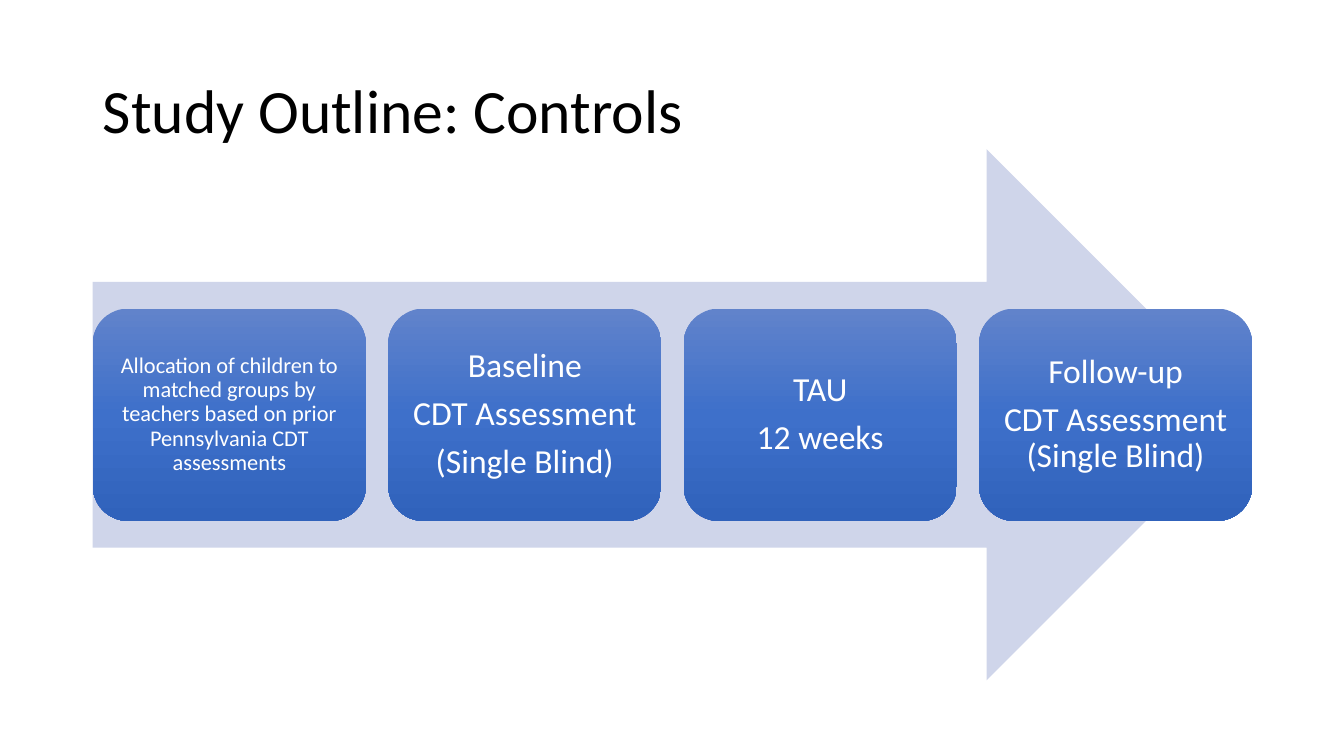
from copy import deepcopy
from pptx import Presentation, util as u
from pptx.dml.color import RGBColor
from pptx.enum import shapes, text
from pptx.oxml.ns import qn

INK = {"title": "000000", "arrow": "CFD5EA", "card": "FFFFFF",
       "top": "6183CB", "mid": "3E70CA", "low": "3062BB"}
LEFT, WIDE = 0.92, 11.5
ARROW_TOP, ARROW_HIGH = 1.48, 5.27
GAP = 0.22
STEPS = [
    (["Allocation of children to matched groups by teachers based on prior "
      "Pennsylvania CDT assessments"], 16, 0.07),
    (["Baseline", "CDT Assessment", "(Single Blind)"], 24, 0.1),
    (["TAU", "12 weeks"], 24, 0.1),
    (["Follow-up", "CDT Assessment (Single Blind)"], 24, 0.1),
]


def write(shape, lines, size, color, align, inset=(0.1, 0.05), after=0):
    frame = shape.text_frame
    frame.word_wrap = True
    frame.auto_size = text.MSO_AUTO_SIZE.NONE
    frame.vertical_anchor = text.MSO_ANCHOR.MIDDLE
    frame.margin_left = frame.margin_right = u.Inches(inset[0])
    frame.margin_top = frame.margin_bottom = u.Inches(inset[1])
    frame.text = "\n".join(lines)
    for para in frame.paragraphs:
        para.alignment = align
        para.line_spacing = 0.9
        para.space_after = u.Pt(size * after)
        font = para.runs[0].font
        font.name, font.size = "Calibri", u.Pt(size)
        font.color.rgb = RGBColor.from_string(color)


def place(kind, *box):
    shape = slide.shapes.add_shape(kind, *map(u.Inches, box))
    shape.shadow.inherit = False
    shape.line.fill.background()
    return shape


deck = Presentation()
deck.slide_width, deck.slide_height = u.Inches(13.33), u.Inches(7.5)
slide = deck.slides.add_slide(deck.slide_layouts[5])

title = slide.shapes.title
title.left, title.top = u.Inches(LEFT), u.Inches(0.4)
title.width, title.height = u.Inches(WIDE), u.Inches(1.45)
write(title, ["Study Outline: Controls"], 44, INK["title"], text.PP_ALIGN.LEFT)

arrow = place(shapes.MSO_SHAPE.RIGHT_ARROW, LEFT, ARROW_TOP, WIDE, ARROW_HIGH)
arrow.fill.solid()
arrow.fill.fore_color.rgb = RGBColor.from_string(INK["arrow"])

wide = (WIDE - GAP * (len(STEPS) - 1)) / len(STEPS)
high = ARROW_HIGH * 0.4
top = ARROW_TOP + (ARROW_HIGH - high) / 2
for col, (lines, size, inset) in enumerate(STEPS):
    card = place(shapes.MSO_SHAPE.ROUNDED_RECTANGLE,
                 LEFT + col * (wide + GAP), top, wide, high)
    card.fill.gradient()
    card.fill.gradient_angle = 270
    stops = next(card._element.iter(qn("a:gsLst")))
    stops.append(deepcopy(stops[0]))
    for stop, spot, name in zip(card.fill.gradient_stops, (0, 0.5, 1),
                                ("top", "mid", "low")):
        stop.position = spot
        stop.color.rgb = RGBColor.from_string(INK[name])
    write(card, lines, size, INK["card"], text.PP_ALIGN.CENTER,
          inset=(inset, inset), after=0.35)

deck.save("out.pptx")
